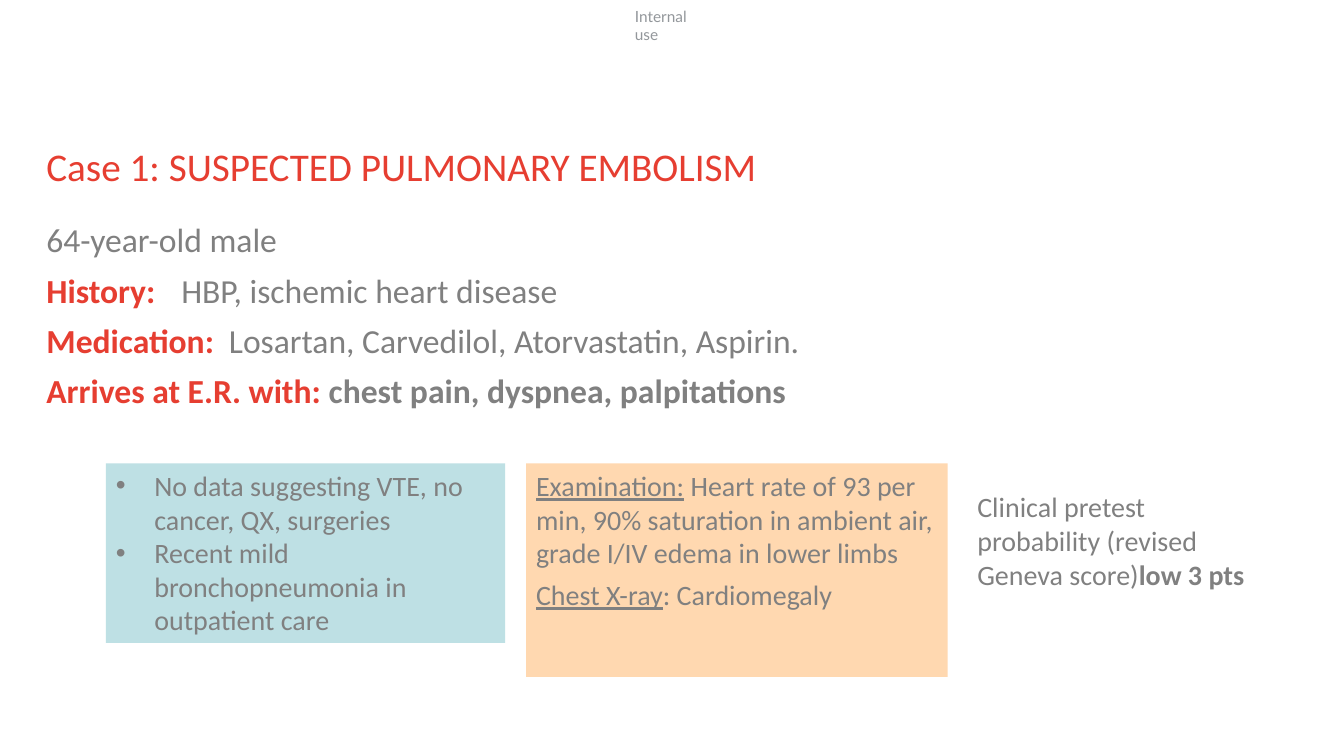
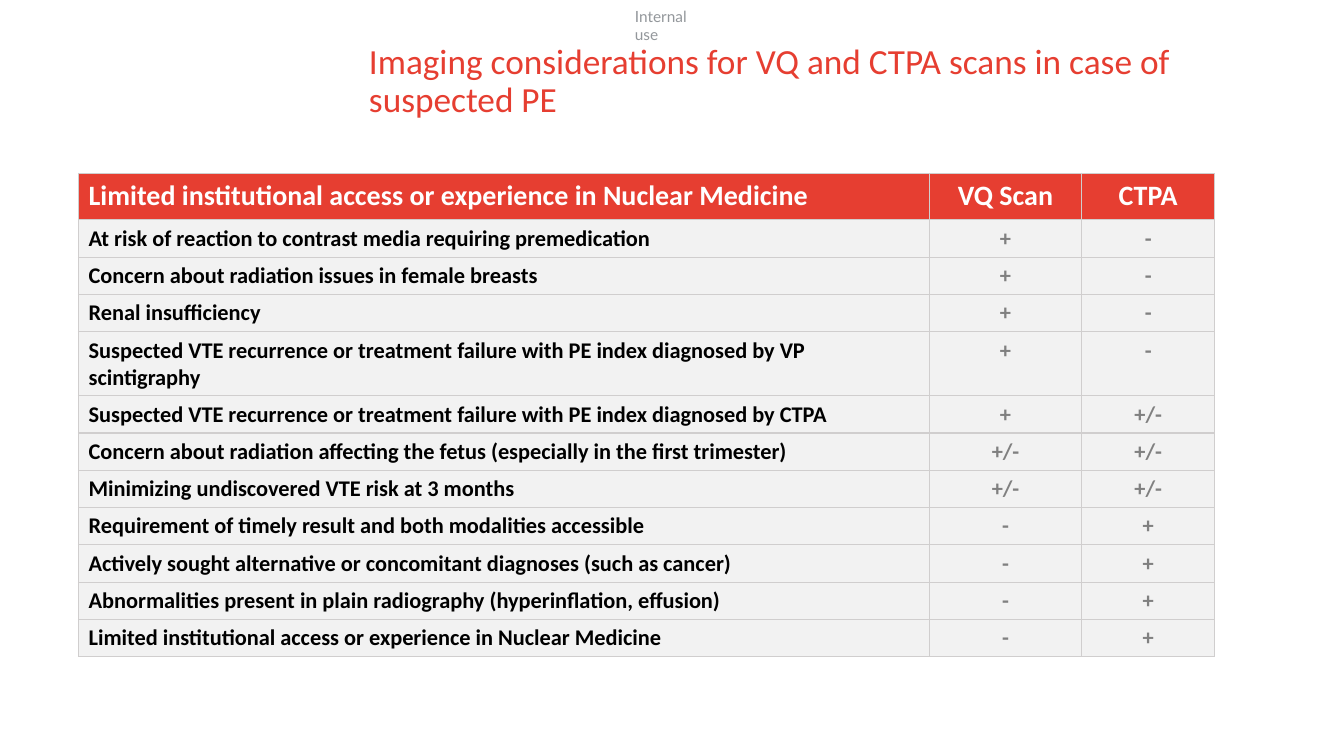
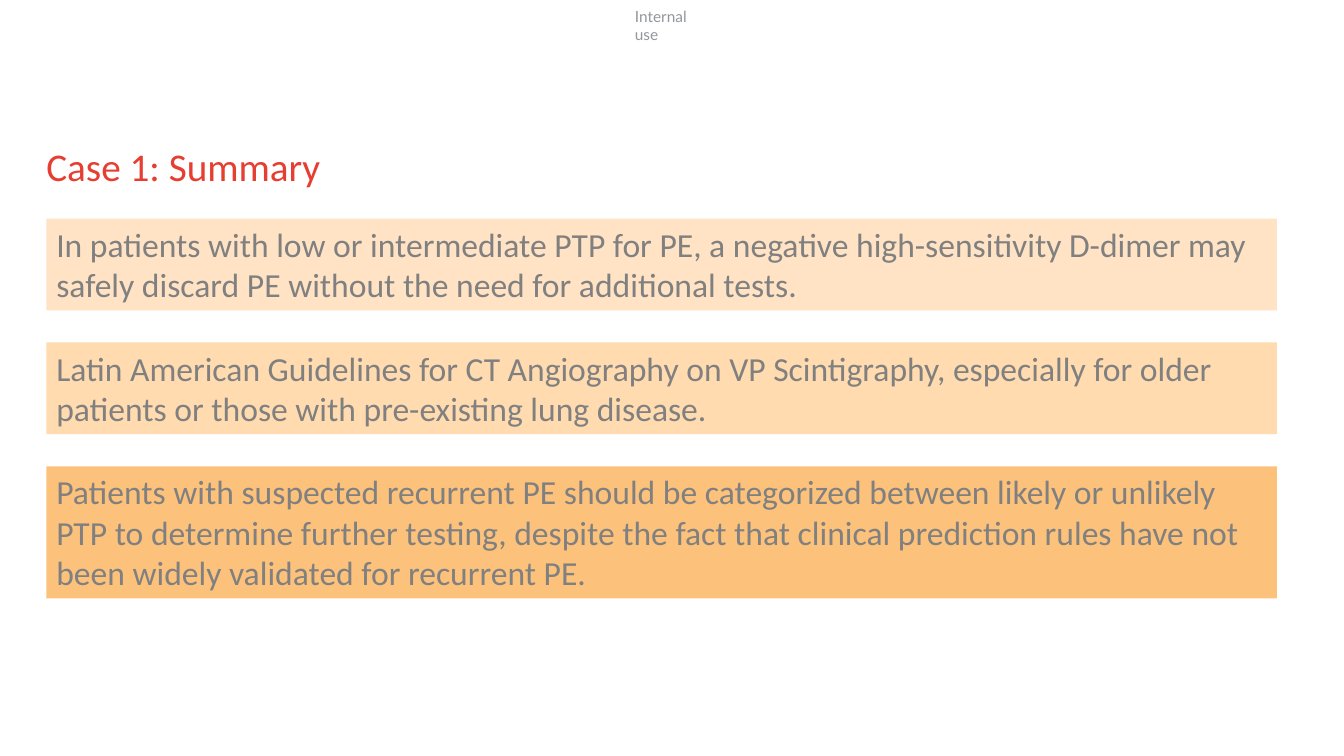
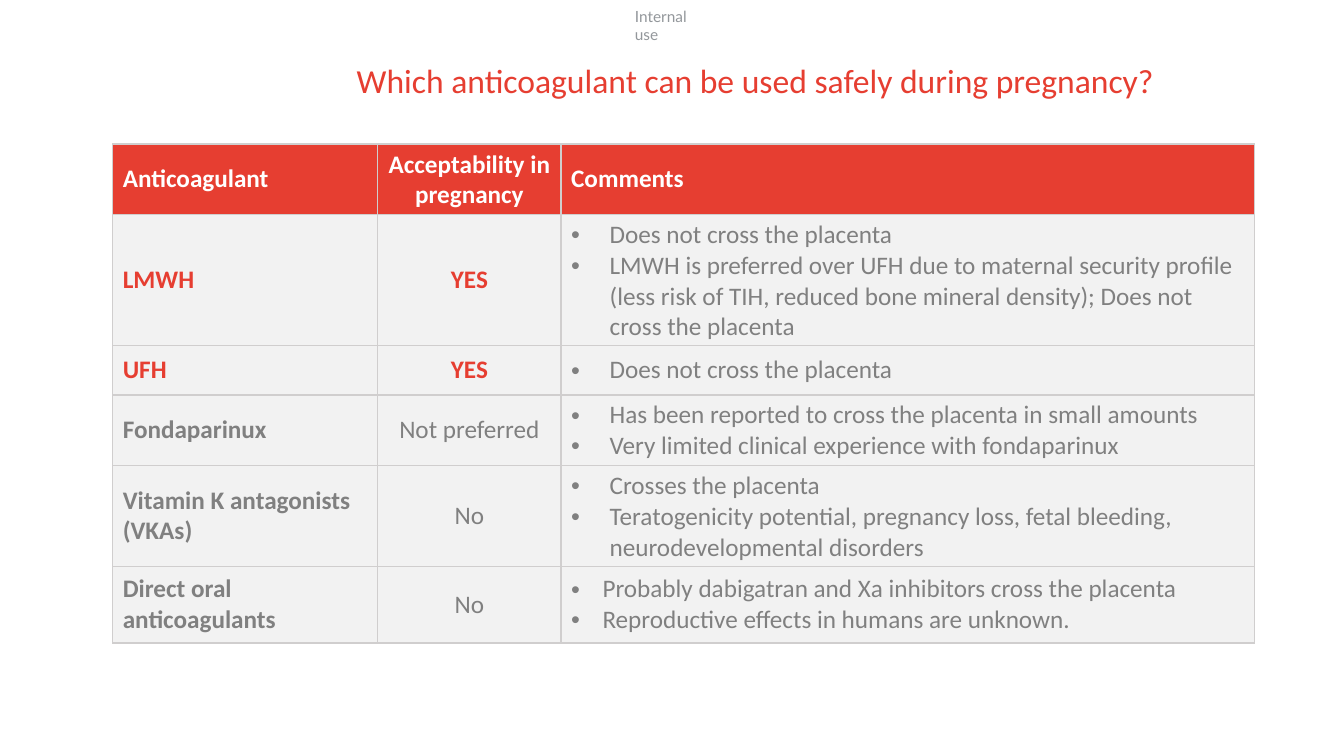
from lxml.etree import SubElement
from pptx import Presentation
from pptx.dml.color import RGBColor
from pptx.enum.shapes import MSO_SHAPE
from pptx.enum.text import MSO_ANCHOR, PP_ALIGN
from pptx.oxml.ns import qn
from pptx.util import Cm, Pt

RED, GREY, PALE, WHITE, BLACK = "E63E31", "808080", "F2F2F2", "FFFFFF", "000000"
BLUE, PEACH, BORDER, NOTE_GREY = "BEE0E4", "FFD8B0", "D0CECE", "93979B"

LABEL = {"color": RED, "bold": True}
STRONG = {"bold": True}
UNDERLINED = {"underline": True}

CASE_TITLE = (1.17, 3.73, 30.48, 1.17)

PATIENT = [
    ([("64-year-old male", {})], None),
    ([("History:", LABEL), ("\tHBP, ischemic heart disease", {})], 3.4),
    ([("Medication:", LABEL), ("\tLosartan, Carvedilol, Atorvastatin, Aspirin.", {})], 4.6),
    ([("Arrives at E.R. with: ", LABEL), ("chest pain, dyspnea, palpitations", STRONG)], None),
]
BACKGROUND = [
    [("No data suggesting VTE, no cancer, QX, surgeries", {})],
    [("Recent mild bronchopneumonia in outpatient care", {})],
]
FINDINGS = [
    [("Examination:", UNDERLINED),
     (" Heart rate of 93 per min, 90% saturation in ambient air, grade I/IV edema in lower limbs", {})],
    [("Chest X-ray", UNDERLINED), (": Cardiomegaly", {})],
]
PRETEST = [[("Clinical pretest probability (revised Geneva score)", {}), ("low 3 pts", STRONG)]]

IMAGING = [
    ("Limited institutional access or experience in Nuclear Medicine", "VQ Scan", "CTPA"),
    ("At risk of reaction to contrast media requiring premedication", "+", "-"),
    ("Concern about radiation issues in female breasts", "+", "-"),
    ("Renal insufficiency", "+", "-"),
    ("Suspected VTE recurrence or treatment failure with PE index diagnosed by VP scintigraphy", "+", "-"),
    ("Suspected VTE recurrence or treatment failure with PE index diagnosed by CTPA", "+", "+/-"),
    ("Concern about radiation affecting the fetus (especially in the first trimester)", "+/-", "+/-"),
    ("Minimizing undiscovered VTE risk at 3 months", "+/-", "+/-"),
    ("Requirement of timely result and both modalities accessible", "-", "+"),
    ("Actively sought alternative or concomitant diagnoses (such as cancer)", "-", "+"),
    ("Abnormalities present in plain radiography (hyperinflation, effusion)", "-", "+"),
    ("Limited institutional access or experience in Nuclear Medicine", "-", "+"),
]

SUMMARY = [
    ("In patients with low or intermediate PTP for PE, a negative high-sensitivity D-dimer may safely "
     "discard PE without the need for additional tests.", "FFE3C4", 2.31),
    ("Latin American Guidelines for CT Angiography on VP Scintigraphy, especially for older patients "
     "or those with pre-existing lung disease.", "FFDBAF", 2.31),
    ("Patients with suspected recurrent PE should be categorized between likely or unlikely PTP to "
     "determine further testing, despite the fact that clinical prediction rules have not been widely "
     "validated for recurrent PE.", "FCC27B", 3.33),
]

ANTICOAGULANT_HEADINGS = ("Anticoagulant", "Acceptability in pregnancy", "Comments")
ANTICOAGULANTS = [
    ("LMWH", "YES", ["Does not cross the placenta",
                     "LMWH is preferred over UFH due to maternal security profile (less risk of TIH, "
                     "reduced bone mineral density); Does not cross the placenta"], 0.97),
    ("UFH", "YES", ["Does not cross the placenta"], 0.97),
    ("Fondaparinux", "Not preferred", ["Has been reported to cross the placenta in small amounts",
                                       "Very limited clinical experience with fondaparinux"], 0.97),
    ("Vitamin K antagonists (VKAs)", "No", ["Crosses the placenta",
                                            "Teratogenicity potential, pregnancy loss, fetal bleeding, "
                                            "neurodevelopmental disorders"], 0.97),
    ("Direct oral anticoagulants", "No", ["Probably dabigatran and Xa inhibitors cross the placenta",
                                          "Reproductive effects in humans are unknown."], 0.79),
]


def rgb(color):
    return RGBColor.from_string(color)


def style(font, size, color=GREY, bold=False, underline=False, name="Calibri"):
    font.name, font.size, font.bold, font.underline = name, Pt(size), bold, underline
    font.color.rgb = rgb(color)


def write(frame, paragraphs, size, bullet=None, align=PP_ALIGN.LEFT, after=0, **base):
    for index, runs in enumerate(paragraphs):
        paragraph = frame.add_paragraph() if index else frame.paragraphs[0]
        paragraph.alignment = align
        paragraph.space_after = Pt(after)
        if bullet:
            properties = paragraph._p.get_or_add_pPr()
            properties.set("marL", str(Cm(bullet)))
            properties.set("indent", str(-Cm(bullet)))
            SubElement(properties, qn("a:buFont"), typeface="Arial")
            SubElement(properties, qn("a:buChar"), char="•")
        for text, changes in runs:
            run = paragraph.add_run()
            run.text = text
            style(run.font, size, **{**base, **changes})


def plain(*lines):
    return [[(line, {})] for line in lines]


def add_text(slide, box, paragraphs, size, inset=False, **base):
    frame = slide.shapes.add_textbox(*map(Cm, box)).text_frame
    frame.word_wrap = True
    if not inset:
        frame.margin_left = frame.margin_right = frame.margin_top = frame.margin_bottom = 0
    write(frame, paragraphs, size, **base)
    return frame


def add_panel(slide, box, fill, paragraphs, size, **base):
    panel = slide.shapes.add_shape(MSO_SHAPE.RECTANGLE, *map(Cm, box))
    panel.shadow.inherit = False
    panel.fill.solid()
    panel.fill.fore_color.rgb = rgb(fill)
    panel.line.fill.background()
    panel.text_frame.word_wrap = True
    panel.text_frame.vertical_anchor = MSO_ANCHOR.TOP
    write(panel.text_frame, paragraphs, size, **base)


def add_slide(deck, title, box, size):
    slide = deck.slides.add_slide(deck.slide_layouts[6])
    add_text(slide, (16, 0.18, 1.98, 0.46), plain("Internal use"), 11, color=NOTE_GREY, name="Lato")
    heading = add_text(slide, box, plain(title), size, color=RED)
    heading.paragraphs[0].line_spacing = 0.9
    return slide


def add_grid(slide, left, top, widths, heights):
    grid = slide.shapes.add_table(len(heights), len(widths), Cm(left), Cm(top),
                                  Cm(sum(widths)), Cm(sum(heights))).table
    for column, width in zip(grid.columns, widths):
        column.width = Cm(width)
    for row, height in zip(grid.rows, heights):
        row.height = Cm(height)
    return grid


def fill_cell(cell, fill, paragraphs, size, anchor=MSO_ANCHOR.TOP, **base):
    cell.fill.solid()
    cell.fill.fore_color.rgb = rgb(fill)
    cell.vertical_anchor = anchor
    properties = cell._tc.get_or_add_tcPr()
    for position, side in enumerate(("lnL", "lnR", "lnT", "lnB")):
        edge = SubElement(properties, qn(f"a:{side}"), w=str(Pt(1)))
        SubElement(SubElement(edge, qn("a:solidFill")), qn("a:srgbClr"), val=BORDER)
        properties.insert(position, edge)
    write(cell.text_frame, paragraphs, size, **base)


def build_case(deck):
    slide = add_slide(deck, "Case 1: SUSPECTED PULMONARY EMBOLISM", CASE_TITLE, 28)
    body = add_text(slide, (1.17, 5.64, 30.48, 10.97), [runs for runs, _ in PATIENT], 24)
    for index, (paragraph, (_, tab)) in enumerate(zip(body.paragraphs, PATIENT)):
        paragraph.line_spacing = 0.9
        if index:
            paragraph.space_before = Pt(10)
        if tab:
            stops = SubElement(paragraph._p.get_or_add_pPr(), qn("a:tabLst"))
            SubElement(stops, qn("a:tab"), pos=str(Cm(tab)), algn="l")
    add_panel(slide, (2.67, 11.68, 10.06, 4.52), BLUE, BACKGROUND, 20, bullet=0.97)
    add_panel(slide, (13.26, 11.68, 10.62, 5.38), PEACH, FINDINGS, 20, after=6)
    add_text(slide, (24.38, 12.22, 7.8, 2.82), PRETEST, 20, inset=True)


def build_imaging(deck):
    slide = add_slide(deck, "Imaging considerations for VQ and CTPA scans in case of suspected PE",
                      (9.3, 1.12, 21.31, 2.01), 25.2)
    grid = add_grid(slide, 1.98, 4.37, (21.44, 3.84, 3.35), [1.17] + [0.94] * (len(IMAGING) - 1))
    for r, row in enumerate(IMAGING):
        for c, text in enumerate(row):
            color = (GREY if c else BLACK) if r else WHITE
            fill_cell(grid.cell(r, c), PALE if r else RED, plain(text), 16 if r else 20,
                      align=PP_ALIGN.CENTER if c else PP_ALIGN.LEFT, color=color, bold=True)


def build_summary(deck):
    slide = add_slide(deck, "Case 1: Summary", CASE_TITLE, 28)
    top, gap = 5.51, 0.81
    for text, fill, height in SUMMARY:
        add_panel(slide, (1.17, top, 31.01, height), fill, plain(text), 24)
        top += height + gap


def build_anticoagulants(deck):
    slide = add_slide(deck, "Which anticoagulant can be used safely during pregnancy?",
                      (8.99, 1.63, 23.14, 1.17), 24)
    grid = add_grid(slide, 2.84, 3.63, (6.68, 4.62, 17.48), (1.75, 2.49, 1.24, 1.75, 2.49, 1.93))
    aligns = (PP_ALIGN.LEFT, PP_ALIGN.CENTER, PP_ALIGN.LEFT)
    for c, heading in enumerate(ANTICOAGULANT_HEADINGS):
        fill_cell(grid.cell(0, c), RED, plain(heading), 18, MSO_ANCHOR.MIDDLE,
                  align=aligns[c], color=WHITE, bold=True)
    for r, (drug, verdict, comments, indent) in enumerate(ANTICOAGULANTS, 1):
        accepted = verdict == "YES"
        color = RED if accepted else GREY
        cells = (
            (plain(drug), {"color": color, "bold": True}),
            (plain(verdict), {"color": color, "bold": accepted}),
            (plain(*comments), {"bullet": indent}),
        )
        for c, (paragraphs, look) in enumerate(cells):
            fill_cell(grid.cell(r, c), PALE, paragraphs, 18, MSO_ANCHOR.MIDDLE, align=aligns[c], **look)


def main():
    deck = Presentation()
    deck.slide_width, deck.slide_height = Cm(33.87), Cm(19.05)
    for build in (build_case, build_imaging, build_summary, build_anticoagulants):
        build(deck)
    deck.save("out.pptx")


if __name__ == "__main__":
    main()
